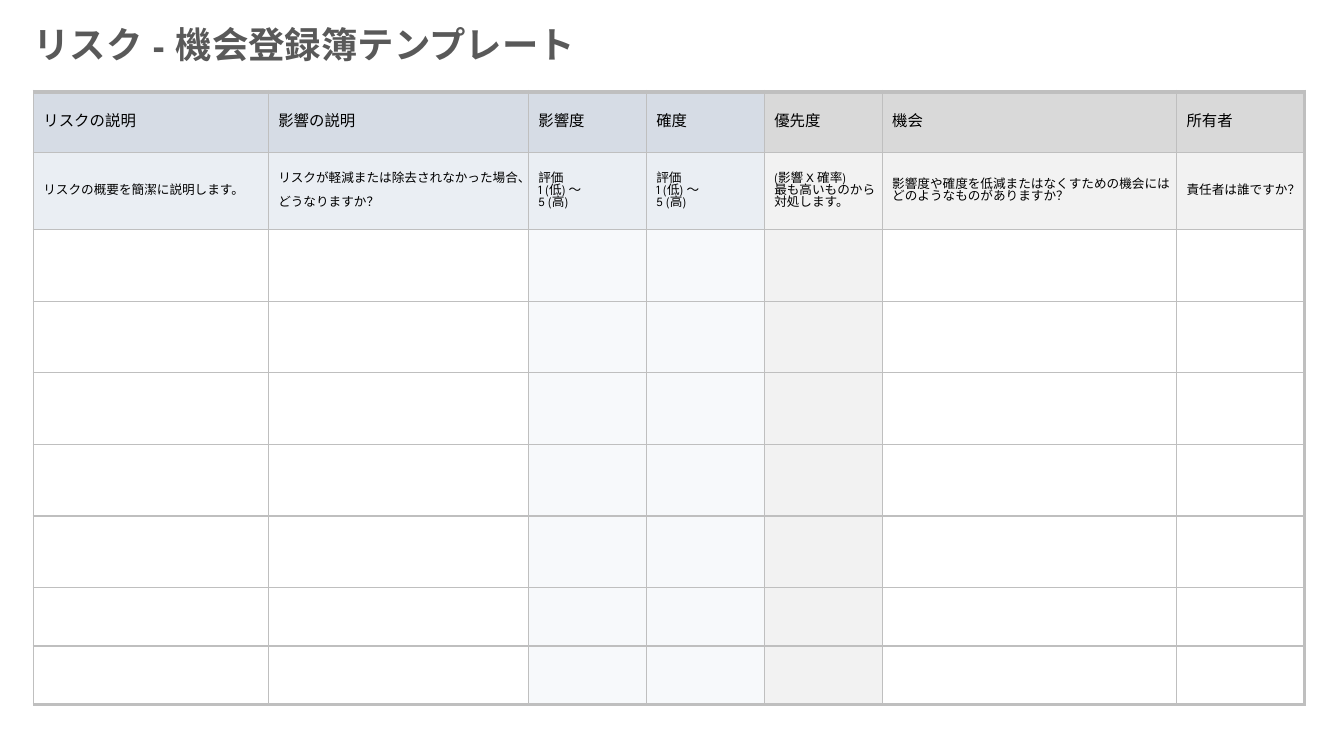
from copy import deepcopy

from lxml.etree import SubElement
from pptx import Presentation
from pptx.dml.color import RGBColor
from pptx.enum.text import MSO_ANCHOR, MSO_AUTO_SIZE, PP_ALIGN
from pptx.oxml.ns import qn
from pptx.util import Inches, Pt

FONT = "League Spartan"
BLACK = RGBColor(0x00, 0x00, 0x00)
WHITE = RGBColor(0xFF, 0xFF, 0xFF)
TITLE_GRAY = RGBColor(0x59, 0x59, 0x59)
BORDER_GRAY = RGBColor(0xBF, 0xBF, 0xBF)
HEADER_BLUE = RGBColor(0xD6, 0xDC, 0xE5)
HEADER_GRAY = RGBColor(0xD9, 0xD9, 0xD9)
GUIDE_BLUE = RGBColor(0xEA, 0xEE, 0xF3)
PALE_GRAY = RGBColor(0xF2, 0xF2, 0xF2)
SCORE_BLUE = RGBColor(0xF7, 0xF9, 0xFB)

# Register contents
HEADINGS = ["リスクの説明", "影響の説明", "影響度", "確度", "優先度", "機会", "所有者"]
RATING = "評価 \v1 (低) ～ \v5 (高)"
GUIDANCE = [
    "リスクの概要を簡潔に説明します。",
    "リスクが軽減または除去されなかった場合、\vどうなりますか？",
    RATING,
    RATING,
    "(影響 X 確率)\v最も高いものから\v対処します。",
    "影響度や確度を低減またはなくすための機会にはどのようなものがありますか？",
    "責任者は誰ですか？",
]
COLUMN_WIDTHS = [2.33, 2.58, 1.17, 1.17, 1.17, 2.92, 1.27]
ROW_HEIGHTS = [0.6, 0.77] + [0.71] * 5 + [0.58] * 2

# Column fills for the heading, guidance and entry rows
HEADING_FILLS = [HEADER_BLUE] * 4 + [HEADER_GRAY] * 3
GUIDANCE_FILLS = [GUIDE_BLUE] * 4 + [PALE_GRAY] * 3
ENTRY_FILLS = [WHITE] * 2 + [SCORE_BLUE] * 2 + [PALE_GRAY] + [WHITE] * 2


class RegisterSlide:
    def __init__(self, deck):
        self.slide = deck.slides.add_slide(deck.slide_layouts[5])
        self.slide.background.fill.solid()
        self.slide.background.fill.fore_color.rgb = WHITE

    def style(self, text_frame, size, color, bold=False):
        for para in text_frame.paragraphs:
            for span in para.runs:
                span.font.size = Pt(size)
                span.font.bold = bold
                span.font.color.rgb = color
                span.font.name = FONT
                SubElement(span.font._element, qn("a:ea"), typeface=FONT)
            # Line breaks take the size of the text around them
            for line_break in para._p.findall(qn("a:br")):
                line_break.append(deepcopy(para.runs[0].font._element))

    def title(self, text, left, top, width, height):
        box = self.slide.shapes.title
        box.left, box.top = Inches(left), Inches(top)
        box.width, box.height = Inches(width), Inches(height)
        frame = box.text_frame
        frame.text = text
        frame.word_wrap = True
        frame.auto_size = MSO_AUTO_SIZE.SHAPE_TO_FIT_TEXT
        frame.vertical_anchor = MSO_ANCHOR.TOP
        frame.paragraphs[0].alignment = PP_ALIGN.LEFT
        self.style(frame, 26, TITLE_GRAY, bold=True)

    def table(self, left, top, widths, heights):
        table = self.slide.shapes.add_table(
            len(heights), len(widths), Inches(left), Inches(top),
            Inches(sum(widths)), Inches(sum(heights))).table
        table.first_row = table.horz_banding = False
        for column, width in zip(table.columns, widths):
            column.width = Inches(width)
        for row, height in zip(table.rows, heights):
            row.height = Inches(height)
        return table

    def cell(self, cell, fill, borders, text="", size=9):
        cell.margin_left = Inches(0.1)
        cell.margin_top = cell.margin_right = Inches(0.01)
        cell.margin_bottom = 0
        cell.vertical_anchor = MSO_ANCHOR.MIDDLE
        self.borders(cell, borders)
        cell.fill.solid()
        cell.fill.fore_color.rgb = fill
        if text:
            cell.text_frame.text = text
            self.style(cell.text_frame, size, BLACK)

    def borders(self, cell, widths):
        properties = cell._tc.get_or_add_tcPr()
        for side in "LRTB":
            line = SubElement(properties, qn(f"a:ln{side}"), w=str(Pt(widths[side])))
            paint = SubElement(line, qn("a:solidFill"))
            SubElement(paint, qn("a:srgbClr"), val=str(BORDER_GRAY))


def main():
    deck = Presentation()
    deck.slide_width, deck.slide_height = Inches(13.33), Inches(7.5)
    page = RegisterSlide(deck)

    # Title
    page.title("リスク - 機会登録簿テンプレート", 0.23, 0.17, 8.66, 0.54)

    # Register table, with a heavier outer edge on three sides
    register = page.table(0.33, 0.91, COLUMN_WIDTHS, ROW_HEIGHTS)
    last_row, last_column = len(ROW_HEIGHTS) - 1, len(COLUMN_WIDTHS) - 1
    blank = [""] * len(COLUMN_WIDTHS)
    for row in range(len(ROW_HEIGHTS)):
        texts = (HEADINGS, GUIDANCE)[row] if row < 2 else blank
        fills = (HEADING_FILLS, GUIDANCE_FILLS, ENTRY_FILLS)[min(row, 2)]
        for column, (text, fill) in enumerate(zip(texts, fills)):
            borders = {
                "L": 1,
                "R": 2.25 if column == last_column else 1,
                "T": 3 if row == 0 else 1,
                "B": 2.25 if row == last_row else 1,
            }
            page.cell(register.cell(row, column), fill, borders, text,
                      size=11 if row == 0 else 9)

    deck.save("out.pptx")


if __name__ == "__main__":
    main()
